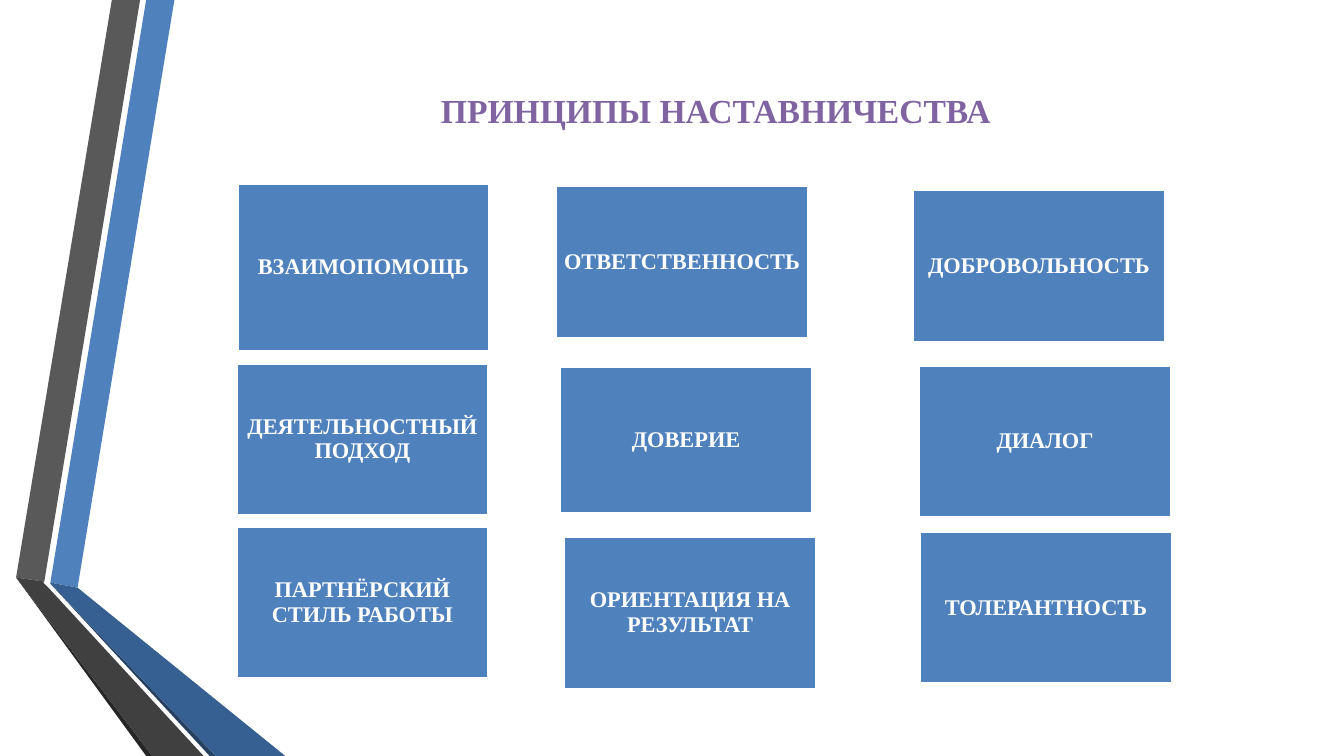
import pptx
import pptx.dml.color
import pptx.enum.text
import pptx.util

Inches, Pt = pptx.util.Inches, pptx.util.Pt
RGB = pptx.dml.color.RGBColor.from_string
CENTER = pptx.enum.text.PP_ALIGN.CENTER
MIDDLE = pptx.enum.text.MSO_ANCHOR.MIDDLE

THEME = {
    "blue": RGB("4F81BD"),
    "deep_blue": RGB("376092"),
    "navy": RGB("254061"),
    "gray": RGB("595959"),
    "dark_gray": RGB("404040"),
    "black": RGB("262626"),
    "white": RGB("FFFFFF"),
    "purple": RGB("8064A2"),
    "font": "Times New Roman",
    "title_size": Pt(24),
    "card_size": Pt(16),
}

# Ribbon outlines, in hundredths of an inch
RIBBONS = [
    ("blue", [(50, 578), (77, 583), (173, 0), (145, 0)]),
    ("gray", [(139, 0), (111, 0), (16, 573), (44, 577)]),
    ("black", [(16, 573), (145, 750), (151, 750)]),
    ("navy", [(50, 579), (208, 750), (214, 750)]),
    ("deep_blue", [(50, 579), (214, 750), (283, 750), (77, 583), (50, 578)]),
    ("dark_gray", [(202, 750), (48, 583), (43, 578), (44, 577), (16, 573), (151, 750)]),
]

COLUMNS = [2.35, 5.56, 9.12]
ROWS = [1.85, 3.63, 5.28]
CARD_WIDTH = 2.49
CARD_HEIGHT = 1.5

# Principle, shift from its grid cell (right, down), extra height
PRINCIPLES = [
    ("ВЗАИМОПОМОЩЬ", 0.01, -0.02, 0.15),
    ("ОТВЕТСТВЕННОСТЬ", -0.04, 0, 0),
    ("ДОБРОВОЛЬНОСТЬ", -0.06, 0.04, 0),
    ("ДЕЯТЕЛЬНОСТНЫЙ ПОДХОД", 0, -0.02, 0),
    ("ДОВЕРИЕ", 0, 0.01, -0.05),
    ("ДИАЛОГ", 0, 0, 0),
    ("ПАРТНЁРСКИЙ СТИЛЬ РАБОТЫ", 0, -0.05, 0),
    ("ОРИЕНТАЦИЯ НА РЕЗУЛЬТАТ", 0.04, 0.05, 0),
    ("ТОЛЕРАНТНОСТЬ", 0.01, 0, 0),
]

CARD_FRAME = {"word_wrap": True, "vertical_anchor": MIDDLE} | {
    f"margin_{side}": Inches(0.07) for side in ("left", "top", "right", "bottom")
}


def apply_format(target, values):
    for name, value in values.items():
        setattr(target, name, value)


def write_centered(frame, text, size, color):
    frame.text = text
    paragraph = frame.paragraphs[0]
    apply_format(paragraph, {"alignment": CENTER, "line_spacing": 0.9})
    font = paragraph.runs[0].font
    apply_format(font, {"name": THEME["font"], "size": size, "bold": True})
    font.color.rgb = color


presentation = pptx.Presentation()
apply_format(presentation, {"slide_width": Inches(13.33), "slide_height": Inches(7.5)})
slide = presentation.slides.add_slide(presentation.slide_layouts[5])

for color, outline in RIBBONS:
    builder = slide.shapes.build_freeform(*outline[0], scale=Inches(0.01))
    builder.add_line_segments(outline[1:], close=True)
    ribbon = builder.convert_to_shape()
    ribbon.shadow.inherit = False
    ribbon.fill.solid()
    ribbon.fill.fore_color.rgb = THEME[color]
    ribbon.line.fill.background()

heading = slide.shapes.title
apply_format(heading, {"left": Inches(1.62), "top": Inches(0.75),
                       "width": Inches(10.96), "height": Inches(0.73)})
apply_format(heading.text_frame, {"word_wrap": True, "vertical_anchor": MIDDLE,
                                  "auto_size": pptx.enum.text.MSO_AUTO_SIZE.NONE})
write_centered(heading.text_frame, "ПРИНЦИПЫ НАСТАВНИЧЕСТВА",
               THEME["title_size"], THEME["purple"])

for index, (principle, right, down, extra) in enumerate(PRINCIPLES):
    row, column = divmod(index, len(COLUMNS))
    card = slide.shapes.add_shape(
        pptx.enum.shapes.MSO_SHAPE.RECTANGLE,
        Inches(COLUMNS[column] + right), Inches(ROWS[row] + down),
        Inches(CARD_WIDTH), Inches(CARD_HEIGHT + extra))
    card.shadow.inherit = False
    card.fill.solid()
    card.fill.fore_color.rgb = THEME["blue"]
    card.line.color.rgb = THEME["white"]
    card.line.width = Pt(1.25)
    apply_format(card.text_frame, CARD_FRAME)
    write_centered(card.text_frame, principle, THEME["card_size"], THEME["white"])

presentation.save("out.pptx")
